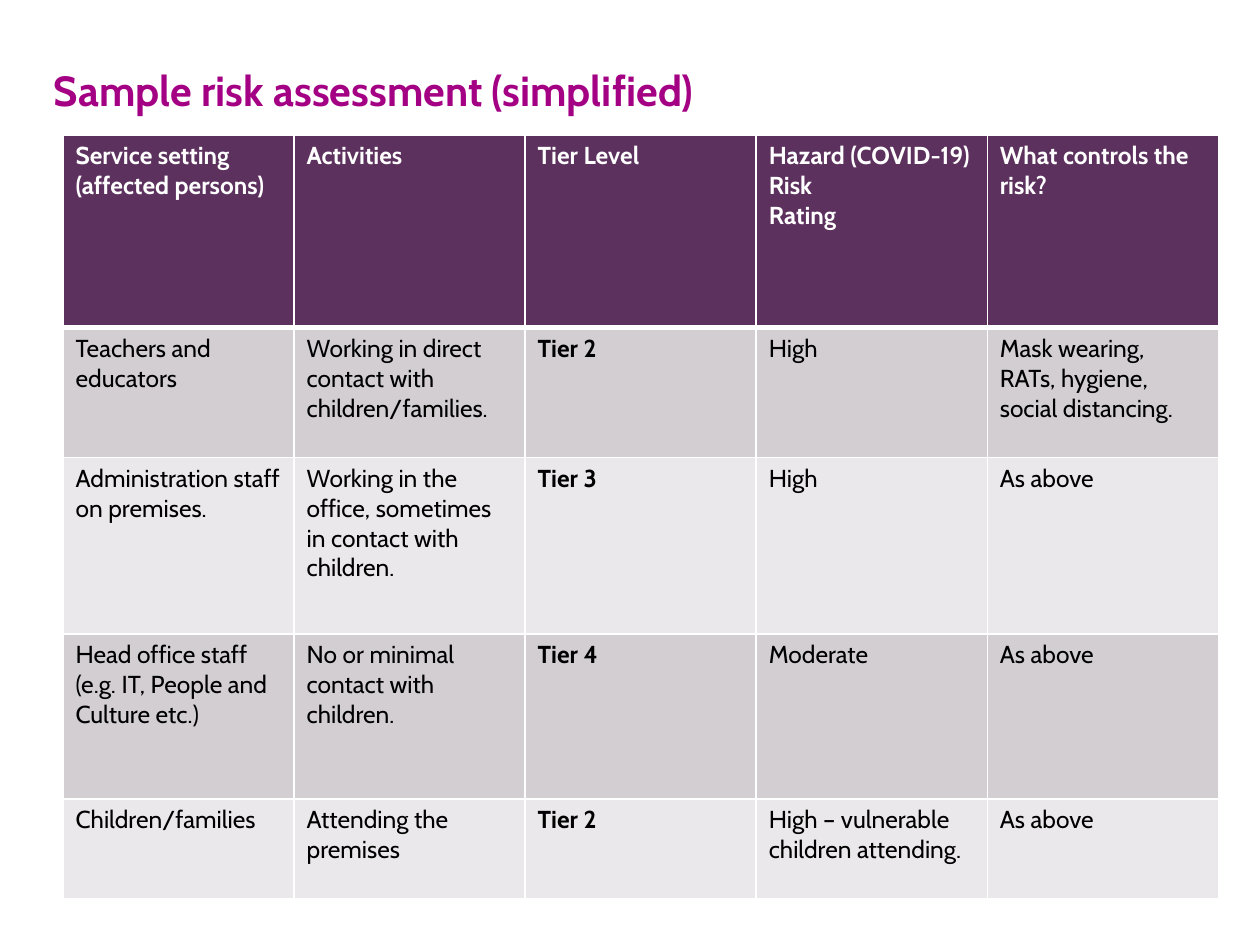
from lxml.etree import SubElement
from pptx import Presentation
from pptx.dml.color import RGBColor
from pptx.enum.text import MSO_ANCHOR
from pptx.oxml.ns import qn
from pptx.util import Inches, Pt

FONT = "Cabin"
COLORS = {
    "title": "A40084", "header": "5C315E", "band_dark": "D2CED2",
    "band_light": "EAE8EA", "border": "FFFFFF", "header_text": "FFFFFF",
    "text": "000000",
}
ROW_HEIGHTS = [1.53, 1.03, 1.4, 1.31, 0.79]
TABLE_WIDTH = 9.17
TIER_COLUMN = 2
ROWS = [
    ["Service setting (affected persons)", "Activities", "Tier Level",
     "Hazard (COVID-19) Risk\nRating", "What controls the risk?"],
    ["Teachers and educators", "Working in direct contact with children/families.",
     "Tier 2", "High", "Mask wearing, RATs, hygiene, social distancing."],
    ["Administration staff on premises.",
     "Working in the office, sometimes in contact with children.",
     "Tier 3", "High", "As above"],
    ["Head office staff (e.g. IT, People and Culture etc.)",
     "No or minimal contact with children.", "Tier 4", "Moderate", "As above"],
    ["Children/families", "Attending the premises", "Tier 2",
     "High – vulnerable children attending.", "As above"],
]


def style(p, size, color, bold):
    p.font.name = FONT
    p.font.size = Pt(size)
    p.font.bold = bold
    p.font.color.rgb = RGBColor.from_string(COLORS[color])


def add_border(cell, side, width):
    ln = SubElement(cell._tc.get_or_add_tcPr(), qn(f"a:ln{side}"), w=str(Pt(width)))
    fill = SubElement(ln, qn("a:solidFill"))
    SubElement(fill, qn("a:srgbClr"), val=COLORS["border"])


prs = Presentation()
prs.slide_width, prs.slide_height = Inches(10), Inches(7.5)
s = prs.slides.add_slide(prs.slide_layouts[6])

# Title
title = s.shapes.add_textbox(Inches(0.33), Inches(0.36), Inches(TABLE_WIDTH), Inches(0.71))
tf = title.text_frame
tf.word_wrap = True
tf.vertical_anchor = MSO_ANCHOR.MIDDLE
tf.text = "Sample risk assessment (simplified)"
style(tf.paragraphs[0], 24, "title", True)

# Risk table
table = s.shapes.add_table(len(ROWS), len(ROWS[0]), Inches(0.5), Inches(1.07),
                           Inches(TABLE_WIDTH), Inches(sum(ROW_HEIGHTS))).table
for row, height in zip(table.rows, ROW_HEIGHTS):
    row.height = Inches(height)

for i, texts in enumerate(ROWS):
    is_header = i == 0
    fill = "header" if is_header else "band_dark" if i % 2 else "band_light"
    for j, text in enumerate(texts):
        cell = table.cell(i, j)
        cell.text = text
        for p in cell.text_frame.paragraphs:
            style(p, 14, "header_text" if is_header else "text",
                  is_header or j == TIER_COLUMN)
        # A thick rule parts the header from the body
        for side in "LRTB":
            thick = (i, side) in [(0, "B"), (1, "T")]
            add_border(cell, side, 3 if thick else 1)
        cell.fill.solid()
        cell.fill.fore_color.rgb = RGBColor.from_string(COLORS[fill])

prs.save("out.pptx")
